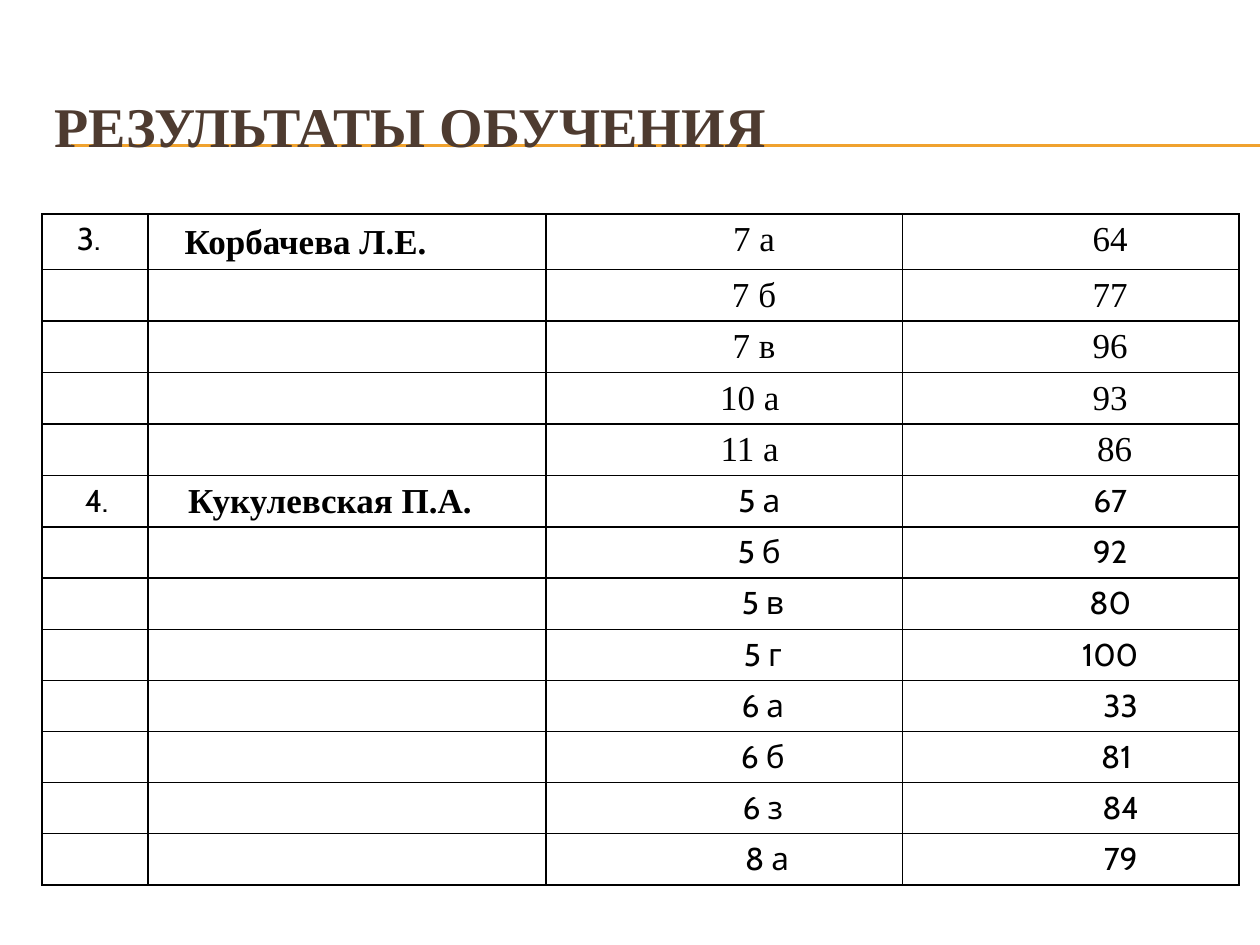
"""Build the slide of learning results by teacher and class."""
from dataclasses import dataclass

from lxml.etree import SubElement
from pptx import Presentation
from pptx.dml.color import RGBColor
from pptx.enum.dml import MSO_FILL
from pptx.enum.shapes import MSO_CONNECTOR
from pptx.enum.text import MSO_ANCHOR, MSO_AUTO_SIZE, PP_ALIGN
from pptx.oxml.ns import qn
from pptx.util import Pt


@dataclass(frozen=True)
class Theme:
    """Colours, typefaces and type sizes of the slide."""
    heading: RGBColor = RGBColor(0x4E, 0x3B, 0x30)
    rule: RGBColor = RGBColor(0xF0, 0xA2, 0x2E)
    ink: RGBColor = RGBColor(0, 0, 0)
    serif: str = "Times New Roman"
    sans: str = "Cabin"
    heading_size: float = 32
    serif_size: float = 20
    sans_size: float = 18


@dataclass(frozen=True)
class Entry:
    """Text of one table cell with its left inset and style."""
    text: str
    inset: float
    font: str
    bold: bool = False
    centred: bool = True
    top: float = 3.6


@dataclass(frozen=True)
class Result:
    """Score of one class with the left insets of both cells."""
    group: str
    score: str
    group_inset: float = 42
    score_inset: float = 53


@dataclass(frozen=True)
class Teacher:
    """Numbered teacher with the results of the classes taught."""
    number: Entry
    name: Entry
    font: str
    results: tuple[Result, ...]


THEME = Theme()
COLUMN_WIDTHS = (60.5, 227.5, 203.75, 192.25)
FIRST_ROW, SERIF_ROW, SANS_ROW = 31.7, 29.45, 29.2
TEACHERS = (
    Teacher(
        Entry("3.", 20, THEME.sans, centred=False),
        Entry("Корбачева Л.Е.", 21, THEME.serif, True, False, 5.1),
        THEME.serif,
        (
            Result("7 а", "64"),
            Result("7 б", "77"),
            Result("7 в", "96"),
            Result("10 а", "93", 37),
            Result("11 а", "86", 37, 58),
        ),
    ),
    Teacher(
        Entry("4.", 24.5, THEME.sans, centred=False),
        Entry("Кукулевская П.А.", 23, THEME.serif, True, False),
        THEME.sans,
        (
            Result("5 а", "67", 48),
            Result("5 б", "92", 48),
            Result("5 в", "80", 52),
            Result("5 г", "100", 52),
            Result("6 а", "33", 52, 65),
            Result("6 б", "81", 52, 60),
            Result("6 з", "84", 52, 65),
            Result("8 а", "79", 57, 65),
        ),
    ),
)


def add_run(paragraph, text: str, font: str, size: float, colour: RGBColor, bold: bool) -> None:
    """Append one formatted run."""
    run = paragraph.add_run()
    run.text = text
    run.font.name = font
    run.font.size = Pt(size)
    run.font.bold = bold
    run.font.color.rgb = colour


def draw_rule(slide, top: float) -> None:
    """Draw a heading rule behind the title."""
    rule = slide.shapes.add_connector(MSO_CONNECTOR.STRAIGHT, Pt(40.5), Pt(top), Pt(720), Pt(top))
    rule.line.color.rgb = THEME.rule
    rule.line.width = Pt(0.75)
    SubElement(rule.element.spPr, qn("a:effectLst"))
    slide.shapes.element.insert(2, rule.element)


def draw_title(slide, text: str) -> None:
    """Place and format the title placeholder."""
    title = slide.shapes.title
    title.left, title.top, title.width, title.height = Pt(24), Pt(36), Pt(684), Pt(66)
    frame = title.text_frame
    frame.auto_size = MSO_AUTO_SIZE.NONE
    frame.vertical_anchor = MSO_ANCHOR.MIDDLE
    frame.margin_top = Pt(8.6)
    paragraph = frame.paragraphs[0]
    paragraph.alignment = PP_ALIGN.LEFT
    add_run(paragraph, text, THEME.serif, THEME.heading_size, THEME.heading, True)


def frame_cell(cell) -> None:
    """Clear the fill of a cell and outline its four sides."""
    properties = cell._tc.get_or_add_tcPr()
    for side in ("a:lnL", "a:lnR", "a:lnT", "a:lnB"):
        border = SubElement(properties, qn(side), w=str(Pt(1)))
        fill = SubElement(border, qn("a:solidFill"))
        SubElement(fill, qn("a:srgbClr"), val=str(THEME.ink))
    if cell.fill.type != MSO_FILL.BACKGROUND:
        cell.fill.background()


def write_entry(cell, entry: Entry) -> None:
    """Write an entry into a cell."""
    cell.margin_left = Pt(entry.inset)
    cell.margin_right = Pt(7.9)
    cell.margin_top = Pt(entry.top)
    paragraph = cell.text_frame.paragraphs[0]
    paragraph.alignment = PP_ALIGN.CENTER if entry.centred else PP_ALIGN.LEFT
    size = THEME.serif_size if entry.font == THEME.serif else THEME.sans_size
    add_run(paragraph, entry.text, entry.font, size, THEME.ink, entry.bold)


def draw_results(slide, teachers: tuple[Teacher, ...]) -> None:
    """Draw the table of teachers, classes and scores."""
    row_heights = (FIRST_ROW,) + (SERIF_ROW,) * 5 + (SANS_ROW,) * 7
    table = slide.shapes.add_table(
        len(row_heights), len(COLUMN_WIDTHS), Pt(24), Pt(122.4),
        Pt(sum(COLUMN_WIDTHS)), Pt(sum(row_heights)),
    ).table
    table.first_row = table.horz_banding = False
    for column, width in zip(table.columns, COLUMN_WIDTHS):
        column.width = Pt(width)
    for row, height in zip(table.rows, row_heights):
        row.height = Pt(height)
    for cell in table.iter_cells():
        frame_cell(cell)
    row_index = 0
    for teacher in teachers:
        write_entry(table.cell(row_index, 0), teacher.number)
        write_entry(table.cell(row_index, 1), teacher.name)
        for result in teacher.results:
            group = Entry(result.group, result.group_inset, teacher.font)
            score = Entry(result.score, result.score_inset, teacher.font)
            write_entry(table.cell(row_index, 2), group)
            write_entry(table.cell(row_index, 3), score)
            row_index += 1


def main() -> None:
    """Build and save the presentation."""
    presentation = Presentation()
    presentation.slide_width, presentation.slide_height = Pt(720), Pt(540)
    slide = presentation.slides.add_slide(presentation.slide_layouts[5])
    draw_title(slide, "РЕЗУЛЬТАТЫ ОБУЧЕНИЯ")
    for top in (82.8, 83.5):
        draw_rule(slide, top)
    draw_results(slide, TEACHERS)
    presentation.save("out.pptx")


if __name__ == "__main__":
    main()
